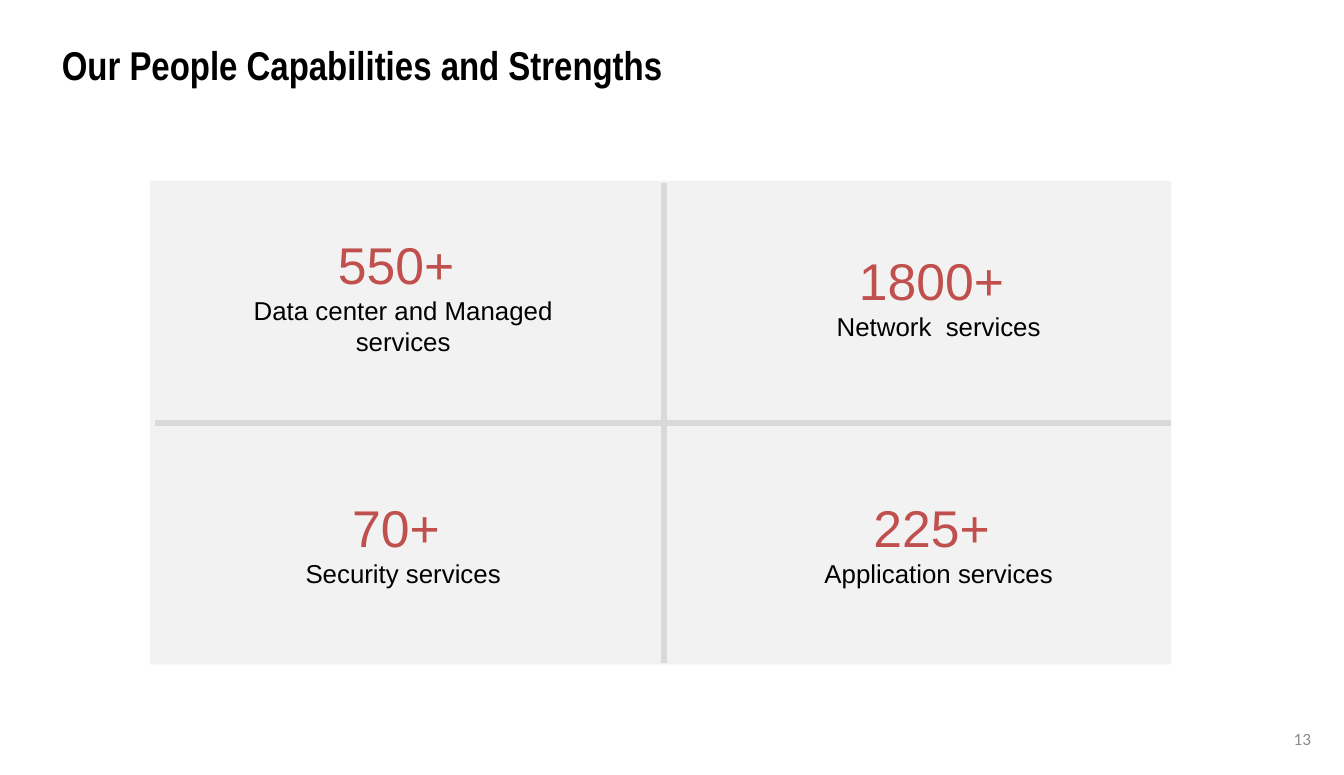
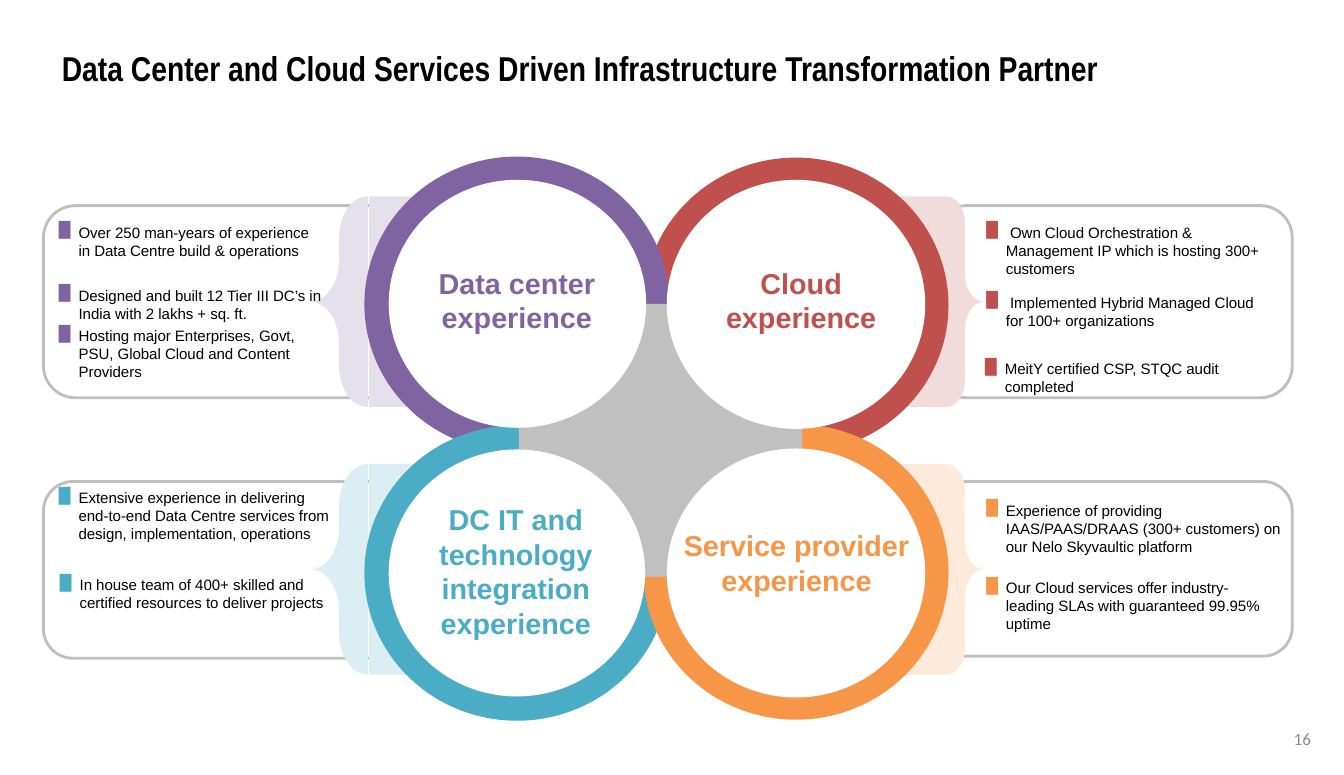
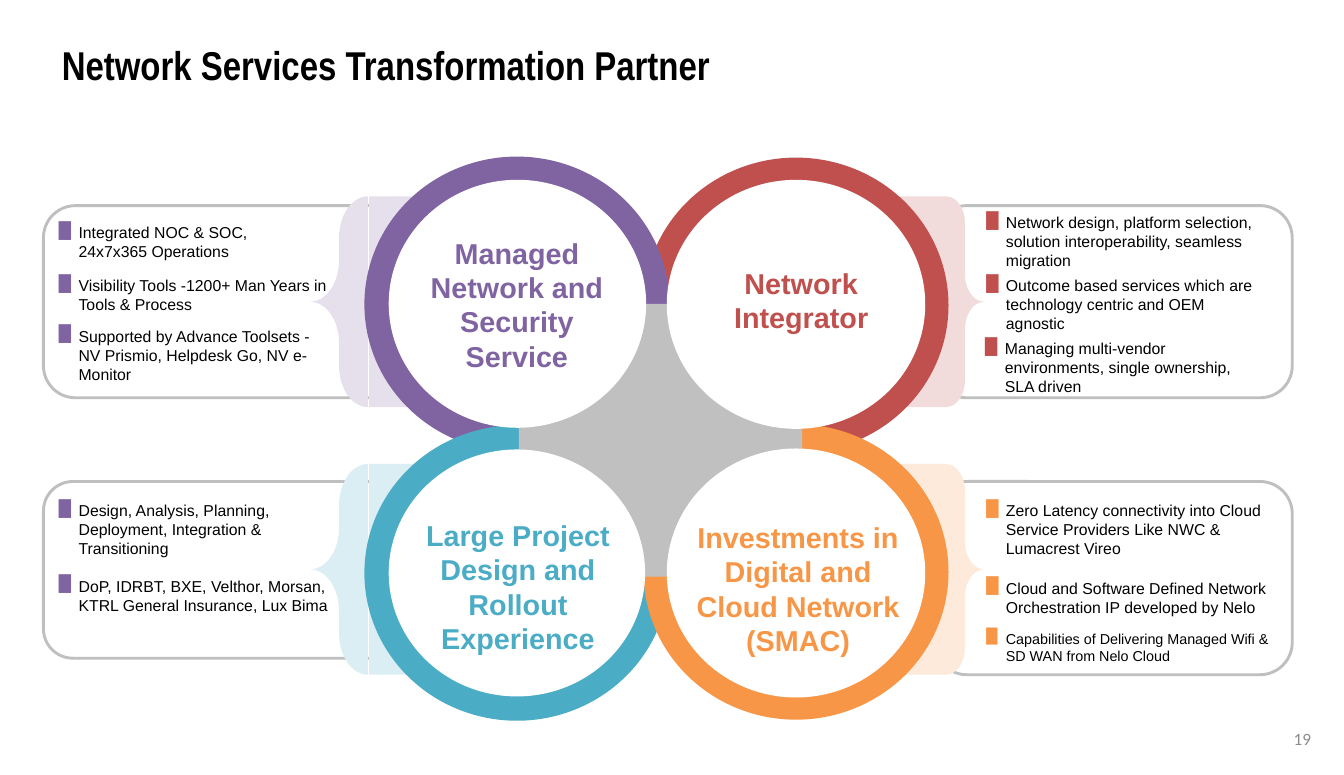
from lxml.etree import SubElement as Sub
from pptx import Presentation
from pptx.dml.color import RGBColor as Rgb
from pptx.enum.shapes import MSO_CONNECTOR as Conn, MSO_SHAPE as Kind
from pptx.enum.text import MSO_ANCHOR as Anchor, MSO_AUTO_SIZE as Auto, PP_ALIGN as Align
from pptx.oxml.ns import qn
from pptx.util import Pt

PX = 9144
BLACK, WHITE = Rgb(0, 0, 0), Rgb(255, 255, 255)
PANEL, RULE, EDGE = Rgb(0xF2, 0xF2, 0xF2), Rgb(0xD9, 0xD9, 0xD9), Rgb(0xBF, 0xBF, 0xBF)
HUB, PAGE = Rgb(0xC0, 0xC0, 0xC0), Rgb(0x8C, 0x8C, 0x8C)
RED, VIOLET = Rgb(0xC0, 0x50, 0x4D), Rgb(0x80, 0x64, 0xA2)
TEAL, ORANGE = Rgb(0x4B, 0xAC, 0xC6), Rgb(0xF7, 0x96, 0x46)
PINK, LILAC = Rgb(0xF2, 0xDC, 0xDB), Rgb(0xE6, 0xE0, 0xEC)
AQUA, PEACH = Rgb(0xDB, 0xEE, 0xF4), Rgb(0xFD, 0xEA, 0xDA)
BLUE, SAGE = Rgb(0, 0x70, 0xC0), Rgb(0x67, 0x9A, 0x9A)

STATS = [
    ("550+ ", "Data center and Managed services", (215, 220, 350, 131)),
    ("1800+ ", "Network  services", (733, 236, 350, 101)),
    ("70+ ", "Security services", (215, 475, 350, 101)),
    ("225+ ", "Application services", (733, 475, 350, 101)),
]

QUADS = [
    dict(right=True, top=190, tone=RED, tint=PINK, core=BLUE,
         ring=(635, 165), hole=(645, 174, 250, 241), box=(904, 199, 346, 186)),
    dict(right=False, top=190, tone=VIOLET, tint=LILAC, core=VIOLET,
         ring=(365, 164), hole=(376, 174, 249, 240), box=(42, 199, 355, 186)),
    dict(right=False, top=449, tone=TEAL, tint=AQUA, core=SAGE,
         ring=(365, 424), hole=(376, 435, 248, 239), box=(42, 466, 372, 171)),
    dict(right=True, top=449, tone=ORANGE, tint=PEACH, core=RED,
         ring=(635, 423), hole=(645, 434, 250, 241), box=(904, 466, 346, 169)),
]

CLOUD = dict(
    title="Data Center and Cloud Services Driven Infrastructure Transformation Partner",
    head=(41, 1092, 24), page="16", size=10.5, last=169,
    names=[
        ("Cloud experience", (668, 212, 214, 157)),
        ("Data center experience", (401, 199, 198, 183)),
        ("DC IT and technology integration experience", (383, 474, 232, 157)),
        ("Service provider experience", (654, 466, 233, 157)),
    ],
    notes=[
        (VIOLET, (57, 216, 244, 53),
         ["Over 250 man-years of experience in Data Centre build & operations"]),
        (VIOLET, (57, 277, 266, 35),
         ["Designed and built 12 Tier III DC’s in India with 2 lakhs + sq. ft."]),
        (VIOLET, (57, 316, 244, 71),
         ["Hosting major Enterprises, Govt, PSU, Global Cloud and Content Providers"]),
        (TEAL, (57, 473, 271, 71),
         ["Extensive experience in delivering end-to-end Data Centre services from "
          "design, implementation, operations"]),
        (TEAL, (58, 557, 265, 50),
         ["In house team of 400+ skilled and certified resources to deliver projects"]),
        (RED, (954, 216, 287, 66),
         [" Own Cloud Orchestration & Management IP which is hosting 300+ customers"]),
        (RED, (954, 284, 266, 53),
         [" Implemented Hybrid Managed Cloud for 100+ organizations"]),
        (RED, (953, 348, 266, 35), ["MeitY certified CSP, STQC audit completed"]),
        (ORANGE, (954, 485, 287, 66),
         ["Experience of providing IAAS/PAAS/DRAAS (300+ customers) on our "
          "Nelo Skyvaultic platform"]),
        (ORANGE, (954, 560, 276, 71),
         ["Our Cloud services offer industry-leading SLAs with guaranteed 99.95% uptime"]),
    ],
)

NETWORK = dict(
    title="Network Services Transformation Partner",
    head=(34, 1067, 28), page="19", size=11, last=187,
    names=[
        ("Network Integrator", (668, 212, 214, 157)),
        ("Managed Network and Security Service", (401, 203, 198, 183)),
        ("Large Project Design and Rollout Experience", (385, 489, 232, 157)),
        ("Investments in Digital and Cloud Network (SMAC)", (662, 496, 220, 147)),
    ],
    notes=[
        (VIOLET, (57, 216, 244, 56), ["Integrated NOC & SOC, 24x7x365 Operations"]),
        (VIOLET, (57, 267, 266, 37),
         ["Visibility Tools -1200+ Man Years in Tools & Process"]),
        (VIOLET, (57, 316, 244, 56),
         ["Supported by Advance Toolsets - NV Prismio, Helpdesk Go, NV e-Monitor"]),
        (VIOLET, (57, 485, 271, 148),
         ["Design, Analysis, Planning, Deployment, Integration & Transitioning",
          ("DoP, IDRBT, BXE, Velthor, Morsan, KTRL General Insurance, Lux Bima", 11, 13)]),
        (RED, (954, 206, 287, 56),
         ["Network design, platform selection, solution interoperability, "
          "seamless migration"]),
        (RED, (954, 267, 266, 56),
         ["Outcome based services which are technology centric and OEM agnostic"]),
        (RED, (953, 328, 266, 56),
         ["Managing multi-vendor environments, single ownership, SLA driven"]),
        (ORANGE, (954, 485, 287, 178),
         ["Zero Latency connectivity into Cloud Service Providers Like NWC & "
          "Lumacrest Vireo",
          ("Capabilities of Delivering Managed Wifi & SD WAN from Nelo Cloud", 10, 50)]),
        (ORANGE, (954, 560, 276, 56),
         ["Cloud and Software Defined Network Orchestration IP developed by Nelo"]),
    ],
)


def scale(area):
    return [n * PX for n in area]


def shape(slide, kind, area, fill=None, line=None, width=1):
    item = slide.shapes.add_shape(kind, *scale(area))
    item.shadow.inherit = False
    if fill is None:
        item.fill.background()
    else:
        item.fill.solid()
        item.fill.fore_color.rgb = fill
    if line is None:
        item.line.fill.background()
    else:
        item.line.color.rgb = line
        item.line.width = Pt(width)
    return item


def rule(slide, start, end):
    line = slide.shapes.add_connector(Conn.STRAIGHT, *scale(start + end))
    line.line.color.rgb = RULE
    line.line.width = Pt(4.25)
    Sub(line._element.spPr, qn("a:effectLst"))
    return line


def frame(slide, area, tight=False, middle=False):
    body = slide.shapes.add_textbox(*scale(area)).text_frame
    body.word_wrap = True
    body.auto_size = Auto.NONE if middle else Auto.SHAPE_TO_FIT_TEXT
    body.vertical_anchor = Anchor.MIDDLE if middle else Anchor.TOP
    if tight:
        body.margin_left = body.margin_right = body.margin_top = body.margin_bottom = 0
    return body


def write(para, text, size, tone=BLACK, face="Arial", bold=False, align=Align.LEFT):
    para.alignment = align
    run = para.add_run()
    run.text = text
    font = run.font
    font.size, font.name, font.bold = Pt(size), face, bold
    font.color.rgb = tone


def bullet(para, tone):
    props = para._p.get_or_add_pPr()
    props.set("marL", str(19 * PX))
    props.set("indent", str(-19 * PX))
    Sub(Sub(props, qn("a:buClr")), qn("a:srgbClr")).set("val", str(tone))
    Sub(props, qn("a:buChar")).set("char", "█")


def start(deck, title, head, page):
    slide = deck.slides.add_slide(deck.slide_layouts[6])
    top, width, size = head
    body = frame(slide, (50, top, width, 50))
    write(body.paragraphs[0], title, size, face="Arial Narrow", bold=True)
    body = frame(slide, (986, 695, 292, 40), middle=True)
    write(body.paragraphs[0], page, 12, PAGE, "Calibri", align=Align.RIGHT)
    return slide


def people(deck):
    slide = start(deck, "Our People Capabilities and Strengths", (34, 1067, 28), "13")
    panel = shape(slide, Kind.RECTANGLE, (145, 175, 988, 468), PANEL)
    slide.shapes._spTree.insert(2, panel._element)
    for count, label, area in STATS:
        body = frame(slide, area)
        write(body.paragraphs[0], count, 36, RED, align=Align.CENTER)
        write(body.add_paragraph(), label, 18, align=Align.CENTER)
    rule(slide, (642, 177), (642, 642))
    rule(slide, (150, 409), (1133, 409)).end_connect(panel, 3)


def brace(slide, quad):
    right, top, tint = quad["right"], quad["top"], quad["tint"]
    shape(slide, Kind.RECTANGLE, (821 if right else 357, top, 95, 204), tint)
    area = (915, top, 37, 204) if right else (300, top, 56, 204)
    item = shape(slide, Kind.LEFT_BRACE, area, tint)
    item.adjustments[0] = 0.714
    if right:
        item._element.spPr.xfrm.set("flipH", "1")


def partner(deck, data):
    slide = start(deck, data["title"], data["head"], data["page"])
    for quad in QUADS:
        x, y, w, h = quad["box"]
        tall = data["last"] if quad is QUADS[-1] else h
        shape(slide, Kind.ROUNDED_RECTANGLE, (x, y, w, tall), line=EDGE, width=2)
    for quad in QUADS:
        brace(slide, quad)
    for quad in QUADS:
        shape(slide, Kind.OVAL, quad["ring"] + (270, 261), quad["core"], quad["tone"], 18)
    shape(slide, Kind.RECTANGLE, (502, 294, 274, 264), HUB)
    for quad, (name, area) in zip(QUADS, data["names"]):
        shape(slide, Kind.OVAL, quad["hole"], WHITE)
        body = frame(slide, area, tight=True, middle=True)
        write(body.paragraphs[0], name, 20, quad["tone"], bold=True, align=Align.CENTER)
    for tone, area, lines in data["notes"]:
        body = frame(slide, area, tight=True)
        first, *rest = lines
        bullet(body.paragraphs[0], tone)
        write(body.paragraphs[0], first, data["size"])
        for text, size, gap in rest:
            para = body.add_paragraph()
            bullet(para, tone)
            para.space_before = Pt(gap)
            write(para, text, size)


def main():
    deck = Presentation()
    deck.slide_width, deck.slide_height = scale((1300, 750))
    people(deck)
    for data in (CLOUD, NETWORK):
        partner(deck, data)
    deck.save("out.pptx")


if __name__ == "__main__":
    main()
